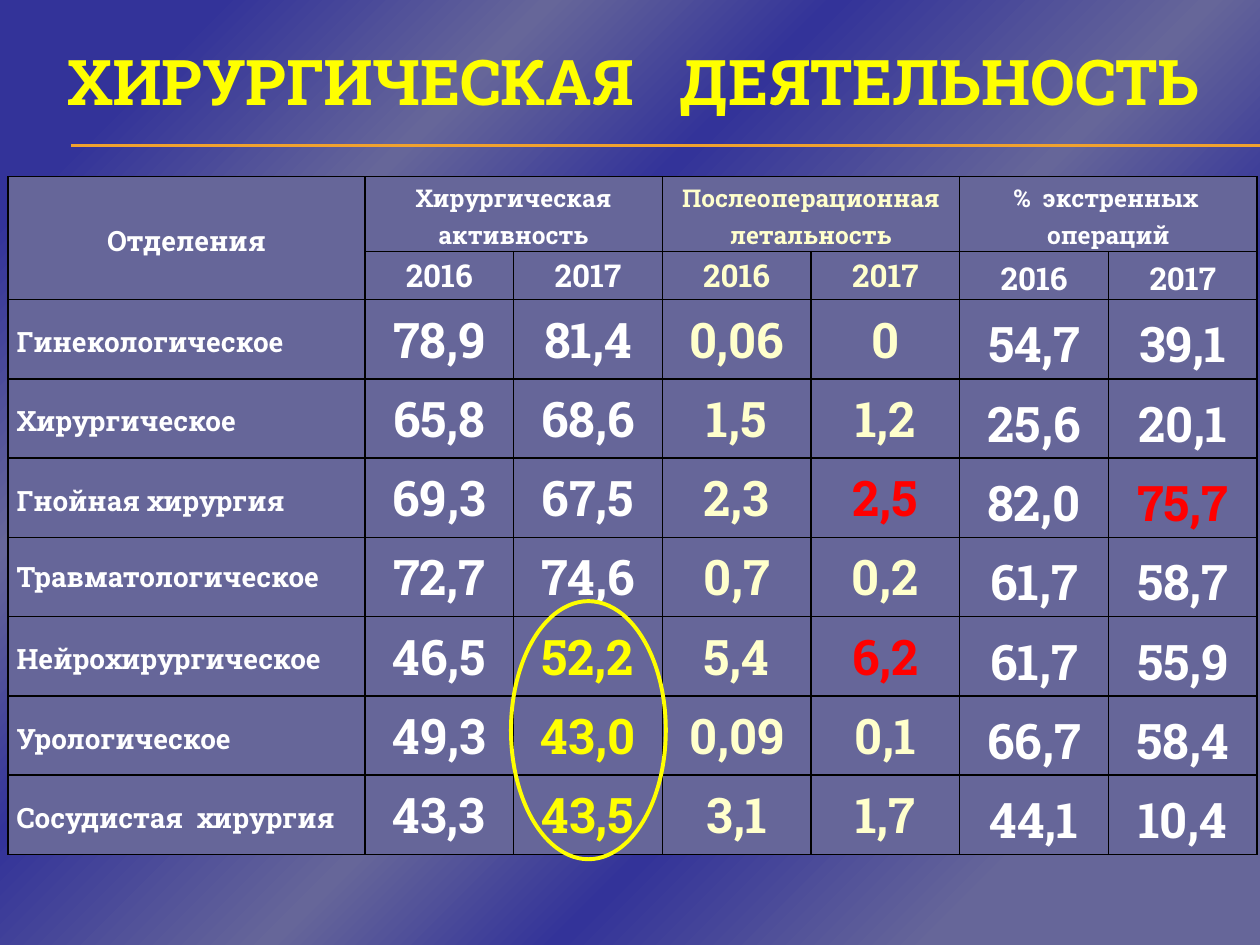
from lxml import etree
from pptx import Presentation
from pptx.dml.color import RGBColor
from pptx.enum.shapes import MSO_CONNECTOR, MSO_SHAPE
from pptx.enum.text import MSO_ANCHOR, PP_ALIGN
from pptx.oxml import parse_xml
from pptx.oxml.ns import nsdecls, qn
from pptx.util import Pt

LINE = MSO_CONNECTOR.STRAIGHT
ROUNDED, OVAL = MSO_SHAPE.ROUNDED_RECTANGLE, MSO_SHAPE.OVAL
MIDDLE = MSO_ANCHOR.MIDDLE
LEFT, CENTER = PP_ALIGN.LEFT, PP_ALIGN.CENTER

FONT = "Roboto Slab"
WHITE, CREAM, YELLOW, RED = "FFFFFF", "FFFFCC", "FFFF00", "FF0000"
BLUE, SLATE, ORANGE, BLACK = "333399", "666699", "F0A22E", "000000"
STOPS = [(10, BLUE), (25, SLATE), (38, BLUE), (55, SLATE), (68, BLUE), (85, SLATE)]

# Heading, text colour and line spacing of the years below it
MEASURES = [
    ("Хирургическая активность", WHITE, 1.0),
    ("Послеоперационная летальность", CREAM, 1.0),
    ("%  экстренных  операций", WHITE, 1.15),
]
YEARS = ["2016", "2017"]
DEPARTMENTS = [
    ("Гинекологическое", "78,9", "81,4", "0,06", "0", "54,7", "39,1"),
    ("Хирургическое", "65,8", "68,6", "1,5", "1,2", "25,6", "20,1"),
    ("Гнойная хирургия", "69,3", "67,5", "2,3", "2,5", "82,0", "75,7"),
    ("Травматологическое", "72,7", "74,6", "0,7", "0,2", "61,7", "58,7"),
    ("Нейрохирургическое", "46,5", "52,2", "5,4", "6,2", "61,7", "55,9"),
    ("Урологическое", "49,3", "43,0", "0,09", "0,1", "66,7", "58,4"),
    ("Сосудистая  хирургия", "43,3", "43,5", "3,1", "1,7", "44,1", "10,4"),
]
# (table row, column) of the marked values
MARKED = {(4, 4): RED, (4, 6): RED, (6, 4): RED,
          (6, 2): YELLOW, (7, 2): YELLOW, (8, 2): YELLOW}


def rgb(value):
    return RGBColor.from_string(value)


def write(tf, text, size, color, align=CENTER, spacing=1.0):
    p = tf.paragraphs[0]
    p.text = text
    p.alignment = align
    p.line_spacing = spacing
    p.font.name, p.font.size, p.font.bold = FONT, Pt(size), True
    p.font.color.rgb = rgb(color)


def paint_background(s):
    fill = s.background.fill
    fill.gradient()
    fill.gradient_angle = 315
    stops = s.background._cSld.find(".//" + qn("a:gsLst"))
    for stop in list(stops):
        stops.remove(stop)
    for position, color in STOPS:
        gs = etree.SubElement(stops, qn("a:gs"), pos=str(position * 1000))
        etree.SubElement(gs, qn("a:srgbClr"), val=color)


def add_rules(s, left, top, width):
    # Two rules that nearly touch
    for y in (top, top + 0.6):
        line = s.shapes.add_connector(LINE, Pt(left), Pt(y), Pt(left + width), Pt(y))
        line.line.color.rgb = rgb(ORANGE)
        line.line.width = Pt(0.75)
        etree.SubElement(line._element.spPr, qn("a:effectLst"))


def add_title(s, left, top, width, height):
    sp = s.shapes.add_shape(ROUNDED, Pt(left), Pt(top), Pt(width), Pt(height))
    sp.shadow.inherit = False
    sp.fill.background()
    sp.line.fill.background()
    sp.text_frame.word_wrap = True
    sp.text_frame.vertical_anchor = MIDDLE
    write(sp.text_frame, "ХИРУРГИЧЕСКАЯ   ДЕЯТЕЛЬНОСТЬ", 36, YELLOW, spacing=0.9)


def style_cell(cell):
    cell.fill.solid()
    cell.fill.fore_color.rgb = rgb(SLATE)
    cell.vertical_anchor = MIDDLE
    cell.margin_left = cell.margin_right = Pt(5)
    cell.margin_top = cell.margin_bottom = Pt(0)
    tc_pr = cell._tc.get_or_add_tcPr()
    for i, side in enumerate("LRTB"):
        tc_pr.insert(i, parse_xml(
            f'<a:ln{side} {nsdecls("a")} w="12700"><a:solidFill>'
            f'<a:srgbClr val="{BLACK}"/></a:solidFill></a:ln{side}>'))


def add_departments_table(s, left, top, width, height):
    name_width, head_height, year_height = 204, 42.5, 27.4
    value_width = (width - name_width) / 6
    value_height = (height - head_height - year_height) / len(DEPARTMENTS)
    table = s.shapes.add_table(2 + len(DEPARTMENTS), 7, Pt(left), Pt(top),
                               Pt(width), Pt(height)).table
    for i, column in enumerate(table.columns):
        column.width = Pt(value_width if i else name_width)
    for i, row in enumerate(table.rows):
        row.height = Pt((head_height, year_height)[i] if i < 2 else value_height)
    for cell in table.iter_cells():
        style_cell(cell)

    # Two header rows
    table.cell(0, 0).merge(table.cell(1, 0))
    write(table.cell(0, 0).text_frame, "Отделения", 16, WHITE, spacing=1.15)
    for i, (heading, color, spacing) in enumerate(MEASURES):
        c = 1 + 2 * i
        table.cell(0, c).merge(table.cell(0, c + 1))
        write(table.cell(0, c).text_frame, heading, 14, color, spacing=1.15)
        for j, year in enumerate(YEARS):
            write(table.cell(1, c + j).text_frame, year, 18, color, spacing=spacing)

    # One row for each department
    for r, (name, *values) in enumerate(DEPARTMENTS, 2):
        spacing = 1.0 if name == "Травматологическое" else 1.15
        write(table.cell(r, 0).text_frame, name, 16, WHITE, LEFT, spacing)
        for c, value in enumerate(values, 1):
            _, color, spacing = MEASURES[(c - 1) // 2]
            write(table.cell(r, c).text_frame, value, 28,
                  MARKED.get((r, c), color), spacing=spacing)


def add_highlight(s, left, top, width, height):
    sp = s.shapes.add_shape(OVAL, Pt(left), Pt(top), Pt(width), Pt(height))
    sp.shadow.inherit = False
    sp.fill.background()
    sp.line.color.rgb = rgb(YELLOW)
    sp.line.width = Pt(2.25)


def main():
    prs = Presentation()
    prs.slide_width, prs.slide_height = Pt(720), Pt(540)
    s = prs.slides.add_slide(prs.slide_layouts[6])
    paint_background(s)
    add_rules(s, 40.5, 82.8, 679.5)
    add_departments_table(s, 4.5, 101, 714, 387)
    add_title(s, 14.4, 29.5, 696, 38)
    add_highlight(s, 292, 343.5, 88.5, 147.5)
    prs.save("out.pptx")


if __name__ == "__main__":
    main()
